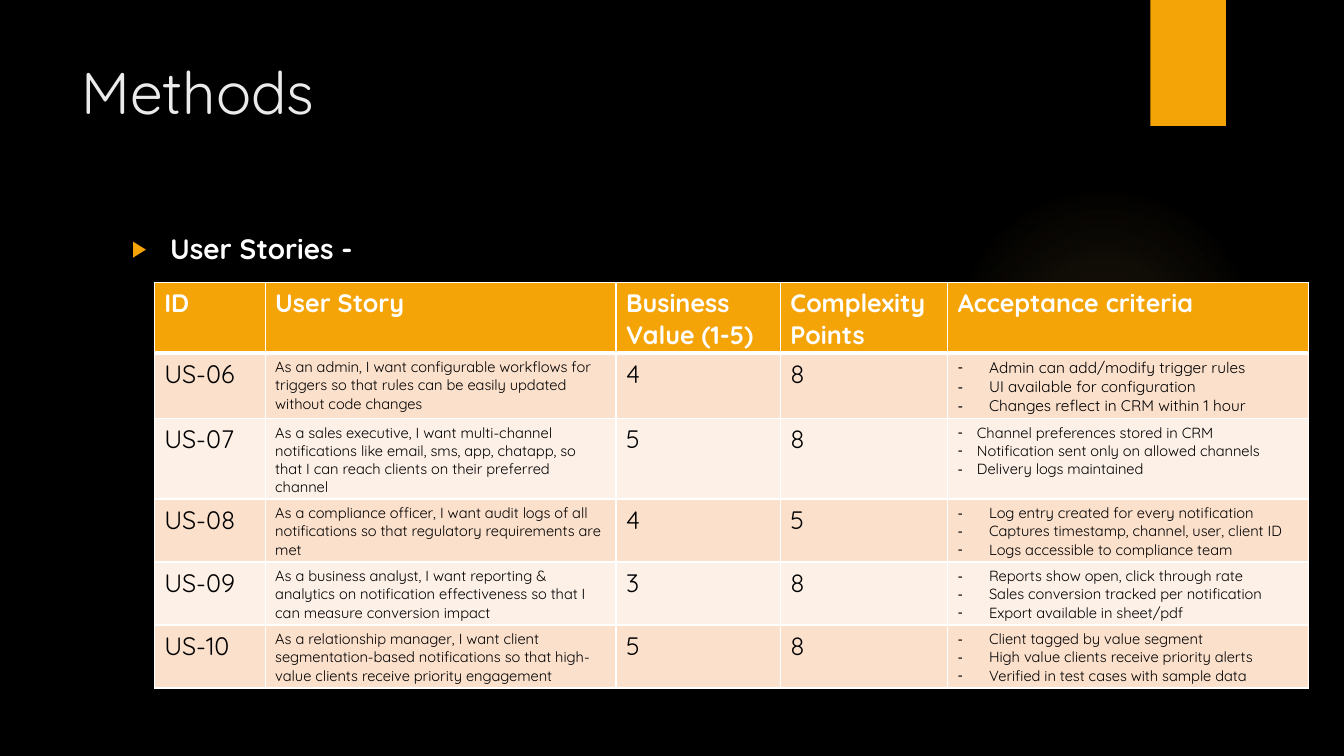
from lxml.etree import SubElement
from pptx import Presentation
from pptx.dml.color import RGBColor
from pptx.enum.shapes import MSO_SHAPE as Shape
from pptx.enum.text import MSO_ANCHOR as Anchor
from pptx.oxml import parse_xml
from pptx.oxml.ns import nsdecls, qn
from pptx.util import Pt

PX = 9144  # 100 px to the inch
FONT = "Quicksand"
ORANGE, WHITE, BLACK = "F5A408", "FFFFFF", "000000"
BANDS = ["FBE0CC", "FDF0E7"]


def color(value):
    return RGBColor.from_string(value)


def write(para, text, size, ink, bold=False, indent=0, bullet="", bullet_ink=None):
    if bullet:
        props = para._p.get_or_add_pPr()
        props.set("marL", str(indent * PX))
        props.set("indent", str(-indent * PX))
        if bullet_ink:
            SubElement(SubElement(props, qn("a:buClr")), qn("a:srgbClr")).set("val", bullet_ink)
            SubElement(props, qn("a:buSzPct")).set("val", "80000")
        SubElement(props, qn("a:buFont")).set("typeface", "Arial")
        SubElement(props, qn("a:buChar")).set("char", bullet)
    span = para.add_run()
    span.text = text
    span.font.color.rgb = color(ink)
    for name, value in {"name": FONT, "size": Pt(size), "bold": bold}.items():
        setattr(span.font, name, value)


# Page
deck = Presentation()
deck.slide_width, deck.slide_height = 1333 * PX, 750 * PX
page = deck.slides.add_slide(deck.slide_layouts[6])
page.background.fill.solid()
page.background.fill.fore_color.rgb = color(BLACK)

# Soft glow and orange tab
glow = page.shapes.add_shape(Shape.OVAL, 941 * PX, 183 * PX, 308 * PX, 308 * PX)
tab = page.shapes.add_shape(Shape.RECTANGLE, 1141 * PX, 0, 75 * PX, 125 * PX)
for shape in (glow, tab):
    shape.shadow.inherit = False
    shape.line.fill.background()
    shape.fill.solid()
    shape.fill.fore_color.rgb = color(ORANGE)
stops = "".join(
    f'<a:gs pos="{place}000"><a:srgbClr val="FAC96A"><a:alpha val="{alpha}000"/></a:srgbClr></a:gs>'
    for place, alpha in [(0, 7), (36, 6), (69, 0)])
solid = glow._element.spPr.find(qn("a:solidFill"))
solid.getparent().replace(solid, parse_xml(
    f'<a:gradFill {nsdecls("a")} rotWithShape="1"><a:gsLst>{stops}</a:gsLst><a:path path="circle">'
    '<a:fillToRect l="50000" t="50000" r="50000" b="50000"/></a:path></a:gradFill>'))

# Title and lead line
for (left, top, width, height), text, style in [
    ((71, 50, 1029, 153), "Methods", {"size": 42, "ink": "EBEBEB"}),
    ((121, 225, 978, 50), "User Stories -",
     {"size": 20, "ink": WHITE, "bold": True, "indent": 38, "bullet": "▶", "bullet_ink": ORANGE}),
]:
    box = page.shapes.add_textbox(left * PX, top * PX, width * PX, height * PX)
    box.text_frame.word_wrap = True
    box.text_frame.vertical_anchor = Anchor.TOP
    write(box.text_frame.paragraphs[0], text, **style)

# User story table
HEADERS = ["ID", "User Story", "Business Value (1-5)", "Complexity Points", "Acceptance criteria"]
STORIES = [
    ("US-06", "As an admin, I want configurable workflows for triggers so that rules can be "
     "easily updated without code changes", "4", "8",
     ["Admin can add/modify trigger rules", "UI available for configuration",
      "Changes reflect in CRM within 1 hour"]),
    ("US-07", "As a sales executive, I want multi-channel notifications like email, sms, app, "
     "chatapp, so that I can reach clients on their preferred channel", "5", "8",
     ["Channel preferences stored in CRM", "Notification sent only on allowed channels",
      "Delivery logs maintained"]),
    ("US-08", "As a compliance officer, I want audit logs of all notifications so that "
     "regulatory requirements are met", "4", "5",
     ["Log entry created for every notification", "Captures timestamp, channel, user, client ID",
      "Logs accessible to compliance team"]),
    ("US-09", "As a business analyst, I want reporting & analytics on notification "
     "effectiveness so that I can measure conversion impact", "3", "8",
     ["Reports show open, click through rate", "Sales conversion tracked per notification",
      "Export available in sheet/pdf"]),
    ("US-10", "As a relationship manager, I want client segmentation-based notifications so "
     "that high-value clients receive priority engagement", "5", "8",
     ["Client tagged by value segment", "High value clients receive priority alerts",
      "Verified in test cases with sample data"]),
]
WIDTHS = [110, 348, 163, 166, 358]
ROW_HEIGHT = 62
rows = [HEADERS, *STORIES]
frame = page.shapes.add_table(len(rows), len(WIDTHS), 153 * PX, 280 * PX,
                              sum(WIDTHS) * PX, ROW_HEIGHT * len(rows) * PX)
table = frame.table
table.horz_banding = False
for column, width in zip(table.columns, WIDTHS):
    column.width = width * PX

for r, values in enumerate(rows):
    table.rows[r].height = ROW_HEIGHT * PX
    for c, value in enumerate(values):
        cell = table.cell(r, c)
        cell.fill.solid()
        cell.fill.fore_color.rgb = color(BANDS[(r - 1) % 2] if r else ORANGE)

        # White borders, thicker under the header
        thickness = {"lnL": 1, "lnR": 1, "lnT": 3 if r == 1 else 1, "lnB": 1 if r else 3}
        for place, (side, points) in enumerate(thickness.items()):
            cell._tc.get_or_add_tcPr().insert(place, parse_xml(
                f'<a:{side} {nsdecls("a")} w="{Pt(points)}"><a:solidFill>'
                f'<a:srgbClr val="{WHITE}"/></a:solidFill></a:{side}>'))

        # Header, criteria list or plain text
        text = cell.text_frame
        if r == 0:
            write(text.paragraphs[0], value, 18, WHITE, bold=True)
        elif c == 4:
            for i, criterion in enumerate(value):
                para = text.add_paragraph() if i else text.paragraphs[0]
                write(para, criterion, 11 if r == 1 else 10.5, BLACK,
                      indent=19 if r == 2 else 31, bullet="-")
        else:
            write(text.paragraphs[0], value, 10.5 if c == 1 else 18, BLACK)
frame.height = 438 * PX

deck.save("out.pptx")
